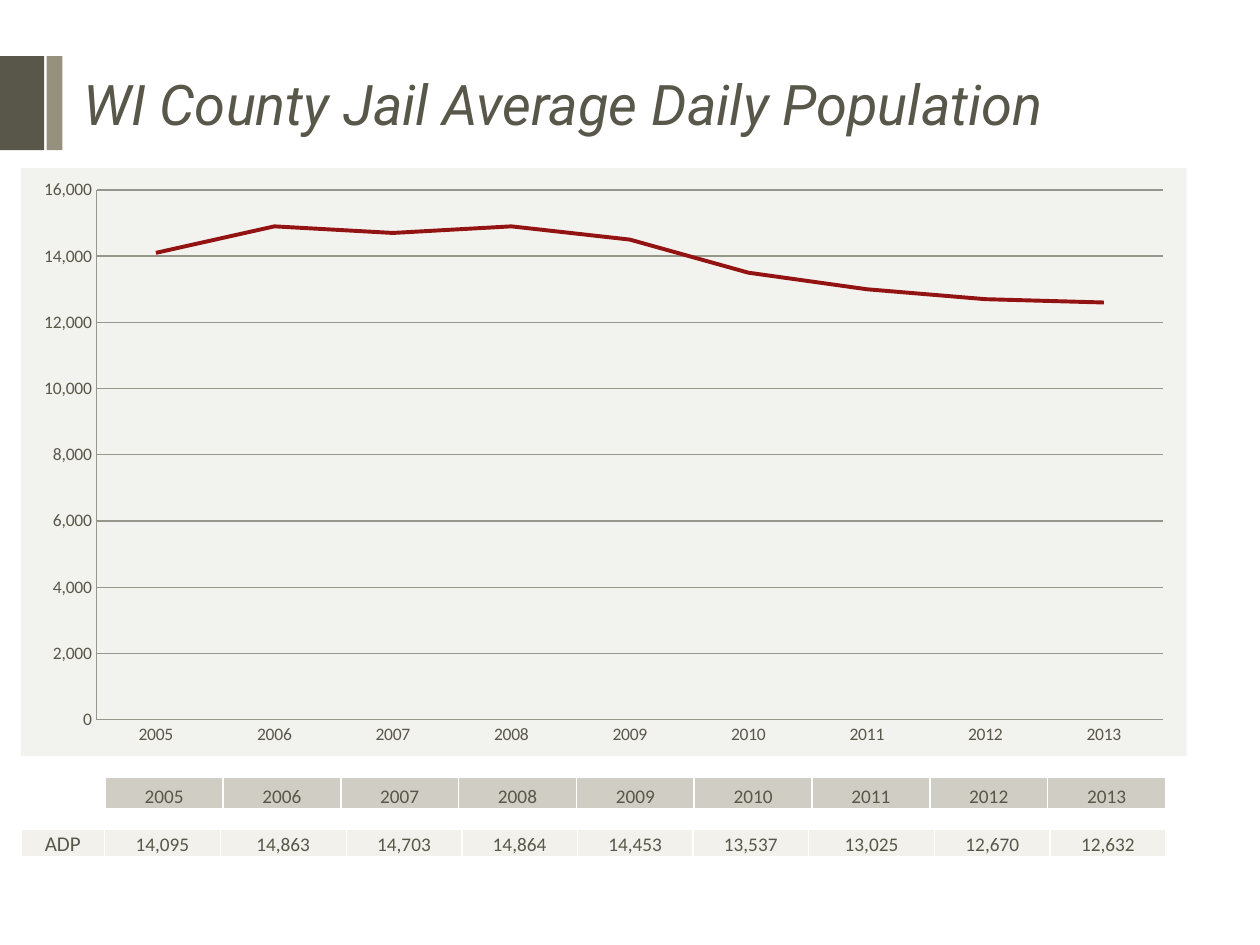
from lxml import etree
from pptx import Presentation
from pptx.chart.data import CategoryChartData
from pptx.dml.color import RGBColor
from pptx.enum.chart import XL_CHART_TYPE, XL_MARKER_STYLE, XL_TICK_MARK
from pptx.enum.shapes import MSO_SHAPE
from pptx.enum.text import MSO_ANCHOR, PP_ALIGN
from pptx.oxml import parse_xml
from pptx.oxml.ns import nsdecls, qn
from pptx.util import Cm, Pt

LINE = XL_CHART_TYPE.LINE
NO_MARK = XL_MARKER_STYLE.NONE
NO_TICK = XL_TICK_MARK.NONE
RECT = MSO_SHAPE.RECTANGLE
MIDDLE = MSO_ANCHOR.MIDDLE
BOTTOM = MSO_ANCHOR.BOTTOM
LEFT = PP_ALIGN.LEFT
CENTER = PP_ALIGN.CENTER

INK = "595749"
PALE = "F2F2EF"
GRID = "96968C"
WIDE, HIGH = 23.5, 11.85
YEARS = [str(year) for year in range(2005, 2014)]
COUNTS = [14095, 14863, 14703, 14864, 14453, 13537, 13025, 12670, 12632]


def color(code):
    return RGBColor.from_string(code)


def paint(fill, code):
    fill.solid()
    fill.fore_color.rgb = color(code)


def style(font, size, face="Calibri"):
    font.size = Pt(size)
    font.name = face
    font.color.rgb = color(INK)


def add_bar(slide, left, width, code):
    bar = slide.shapes.add_shape(RECT, Cm(left), Cm(1.13), Cm(width), Cm(1.9))
    bar.shadow.inherit = False
    paint(bar.fill, code)
    bar.line.fill.background()


def set_title(slide, text):
    title = slide.shapes.title
    title.left, title.top = Cm(1.42), Cm(1.12)
    title.width, title.height = Cm(21.6), Cm(1.9)
    paint(title.fill, "FFFFFF")
    tone = title.fill._xPr.find(".//" + qn("a:srgbClr"))
    etree.SubElement(tone, qn("a:alpha"), val="50000")
    frame = title.text_frame
    frame.vertical_anchor = MIDDLE
    para = frame.paragraphs[0]
    para.alignment = LEFT
    run = para.add_run()
    run.text = text
    style(run.font, 32, "Roboto")
    run.font.italic = True


def fill_part():
    return parse_xml(
        f'<c:spPr {nsdecls("c", "a")}><a:solidFill><a:srgbClr val="{PALE}"/>'
        '</a:solidFill><a:ln><a:noFill/></a:ln></c:spPr>'
    )


def place_plot(chart, left, top, width, height):
    body = chart.element.find(qn("c:chart"))
    body.addnext(fill_part())
    area = body.find(qn("c:plotArea"))
    for old in area.findall(qn("c:layout")):
        area.remove(old)
    box = "".join(
        f'<c:{name} val="{val}"/>'
        for name, val in (
            ("layoutTarget", "inner"), ("xMode", "edge"), ("yMode", "edge"),
            ("x", left / WIDE), ("y", top / HIGH),
            ("w", width / WIDE), ("h", height / HIGH),
        )
    )
    area.insert(0, parse_xml(
        f'<c:layout {nsdecls("c")}><c:manualLayout>{box}'
        '</c:manualLayout></c:layout>'
    ))
    area.append(fill_part())


def set_line(line, code, width):
    line.color.rgb = color(code)
    line.width = Pt(width)


def add_graph(slide):
    data = CategoryChartData(number_format="#,##0")
    data.categories = YEARS
    data.add_series("Series 1", [round(count, -2) for count in COUNTS])
    chart = slide.shapes.add_chart(
        LINE, Cm(0.42), Cm(3.39), Cm(WIDE), Cm(HIGH), data
    ).chart
    chart.has_legend = False
    chart.has_title = False
    style(chart.font, 10)
    for axis in (chart.category_axis, chart.value_axis):
        axis.major_tick_mark = axis.minor_tick_mark = NO_TICK
        set_line(axis.format.line, GRID, 0.75)
        style(axis.tick_labels.font, 10)
    axis = chart.value_axis
    axis.minimum_scale, axis.maximum_scale = 0, 16000
    axis.major_unit = 2000
    axis.tick_labels.number_format = "#,##0"
    axis.tick_labels.number_format_is_linked = False
    axis.has_major_gridlines = True
    set_line(axis.major_gridlines.format.line, GRID, 0.75)
    plot = chart.plots[0]
    plot.vary_by_categories = False
    trend = plot.series[0]
    trend.smooth = False
    trend.marker.style = NO_MARK
    set_line(trend.format.line, "931212", 2.25)
    place_plot(chart, 1.53, 0.44, 21.5, 10.68)


def add_edges(cell):
    props = cell._tc.get_or_add_tcPr()
    for side in ("lnL", "lnR", "lnT", "lnB"):
        props.append(parse_xml(
            f'<a:{side} {nsdecls("a")} w="12700"><a:solidFill>'
            f'<a:srgbClr val="FFFFFF"/></a:solidFill></a:{side}>'
        ))


def fill_cell(cell, text, size, code):
    add_edges(cell)
    paint(cell.fill, code)
    cell.vertical_anchor = BOTTOM
    cell.margin_left = cell.margin_right = cell.margin_top = Cm(0.03)
    cell.margin_bottom = 0
    para = cell.text_frame.paragraphs[0]
    para.alignment = CENTER
    run = para.add_run()
    run.text = text
    style(run.font, size)


def add_row(slide, left, top, height, widths, texts, code):
    table = slide.shapes.add_table(
        1, len(texts), Cm(left), Cm(top), Cm(sum(widths)), Cm(height)
    ).table
    table.first_row = table.horz_banding = False
    for index, (width, text) in enumerate(zip(widths, texts)):
        table.columns[index].width = Cm(width)
        size = 11 if text[0].isdigit() else 12
        fill_cell(table.cell(0, index), text, size, code)


def main():
    deck = Presentation()
    deck.slide_width, deck.slide_height = Cm(25.4), Cm(19.05)
    slide = deck.slides.add_slide(deck.slide_layouts[5])
    add_bar(slide, 0, 0.89, INK)
    add_bar(slide, 0.94, 0.32, "96917E")
    set_title(slide, "WI County Jail Average Daily Population")
    add_graph(slide)
    count = len(YEARS)
    add_row(slide, 2.12, 15.67, 0.64, [21.38 / count] * count, YEARS, "CFCDC4")
    widths = [2.54 if year in ("2006", "2011") else 2.33 for year in YEARS]
    texts = ["ADP"] + [f"{value:,}" for value in COUNTS]
    add_row(slide, 0.42, 16.72, 0.56, [1.69] + widths, texts, "F2F1EC")
    deck.save("out.pptx")


if __name__ == "__main__":
    main()
